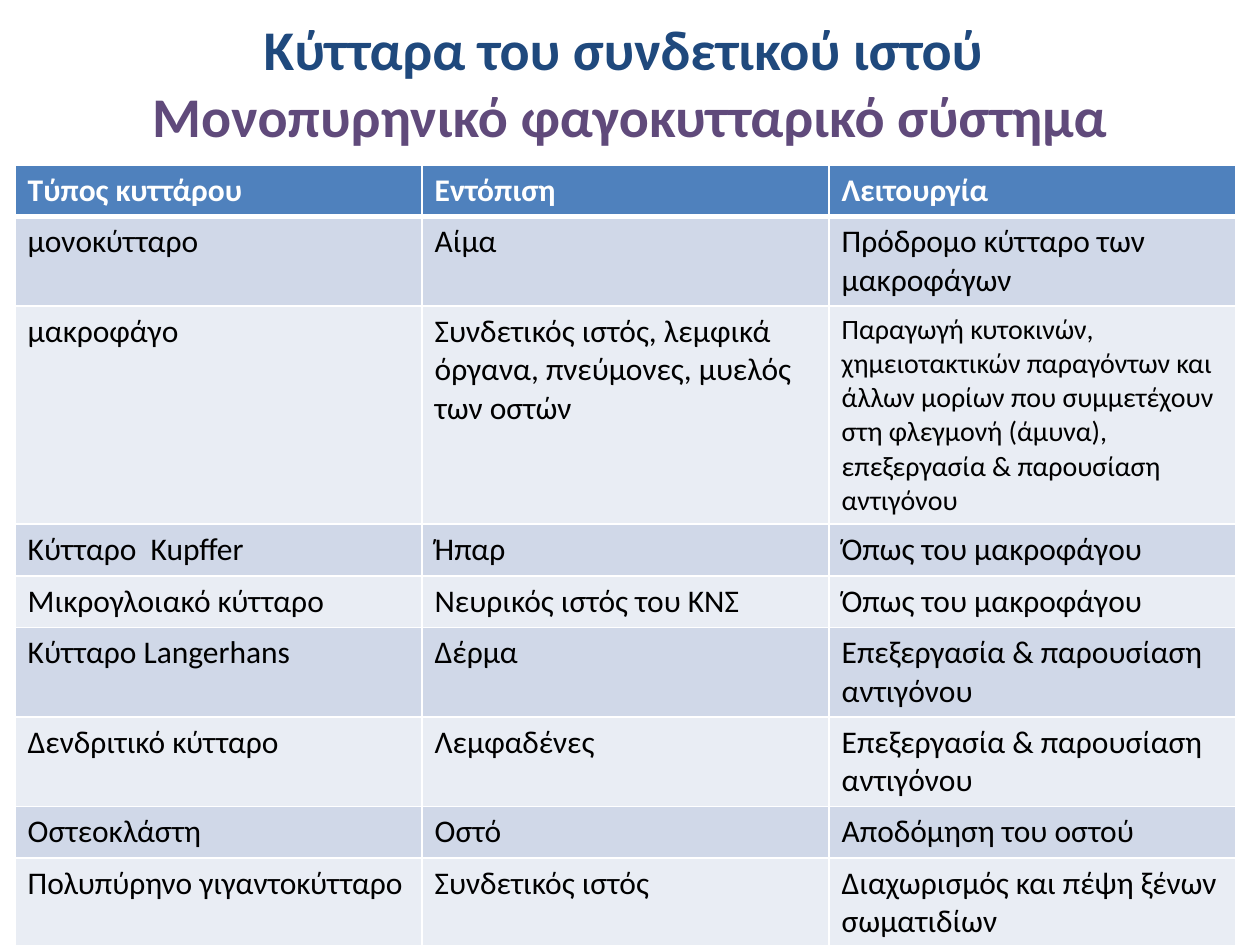
from dataclasses import dataclass

from lxml.etree import SubElement
from pptx import Presentation
from pptx.dml.color import RGBColor as Rgb
from pptx.enum.text import MSO_ANCHOR as Anchor, PP_ALIGN as Align
from pptx.oxml.ns import qn
from pptx.util import Inches, Pt


@dataclass(frozen=True)
class Theme:
    font: str = "Calibri"
    title_size: int = 32
    body_size: int = 18
    long_text_size: int = 16
    title: str = "1F497D"
    subtitle: str = "604A7B"
    header_text: str = "FFFFFF"
    body_text: str = "000000"
    header_fill: str = "4F81BD"
    odd_fill: str = "D0D8E8"
    even_fill: str = "E9EDF4"
    border: str = "FFFFFF"
    thin: int = 1
    thick: int = 3


THEME = Theme()
LONG_TEXT = 100  # characters above which a cell uses the smaller size

TITLE_LINES = [
    ("Κύτταρα του συνδετικού ιστού ", THEME.title),
    ("Μονοπυρηνικό φαγοκυτταρικό σύστημα", THEME.subtitle),
]
CELL_TYPES = [
    ("Τύπος κυττάρου", "Εντόπιση", "Λειτουργία"),
    ("μονοκύτταρο", "Αίμα", "Πρόδρομο κύτταρο των μακροφάγων"),
    ("μακροφάγο",
     "Συνδετικός ιστός, λεμφικά όργανα, πνεύμονες, μυελός των οστών",
     "Παραγωγή κυτοκινών, χημειοτακτικών παραγόντων και άλλων μορίων που "
     "συμμετέχουν στη φλεγμονή (άμυνα), επεξεργασία & παρουσίαση αντιγόνου"),
    ("Κύτταρο  Kupffer", "Ήπαρ", "Όπως του μακροφάγου"),
    ("Μικρογλοιακό κύτταρο", "Νευρικός ιστός του ΚΝΣ", "Όπως του μακροφάγου"),
    ("Κύτταρο Langerhans", "Δέρμα", "Επεξεργασία & παρουσίαση αντιγόνου"),
    ("Δενδριτικό κύτταρο", "Λεμφαδένες", "Επεξεργασία & παρουσίαση αντιγόνου"),
    ("Οστεοκλάστη", "Οστό", "Αποδόμηση του οστού"),
    ("Πολυπύρηνο γιγαντοκύτταρο", "Συνδετικός ιστός",
     "Διαχωρισμός και πέψη ξένων σωματιδίων"),
]


def style_font(font, size, color, bold):
    font.name = THEME.font
    font.size = Pt(size)
    font.bold = bold
    font.color.rgb = Rgb.from_string(color)


def add_title(slide):
    title = slide.shapes.add_textbox(
        Inches(0.5), Inches(0.14), Inches(9), Inches(1.09))
    frame = title.text_frame
    frame.word_wrap = True
    frame.vertical_anchor = Anchor.BOTTOM
    heading = frame.paragraphs[0]
    heading.alignment = Align.CENTER
    style_font(heading.font, THEME.title_size, THEME.title, True)
    for index, (text, color) in enumerate(TITLE_LINES):
        if index:
            heading.add_line_break()
        line = heading.add_run()
        line.text = text
        style_font(line.font, THEME.title_size, color, True)


def set_borders(cell, bottom_width, top_width):
    """Insert the border lines ahead of the fill, as the schema requires."""
    properties = cell._tc.get_or_add_tcPr()
    widths = {"a:lnL": THEME.thin, "a:lnR": THEME.thin,
              "a:lnT": top_width, "a:lnB": bottom_width}
    for position, (side, width) in enumerate(widths.items()):
        line = SubElement(properties, qn(side), w=str(Pt(width)))
        fill = SubElement(line, qn("a:solidFill"))
        SubElement(fill, qn("a:srgbClr"), val=THEME.border)
        properties.insert(position, line)


def fill_cell(cell, text, row):
    is_header = row == 0
    if is_header:
        fill, color = THEME.header_fill, THEME.header_text
    else:
        fill = THEME.odd_fill if row % 2 else THEME.even_fill
        color = THEME.body_text
    size = THEME.long_text_size if len(text) > LONG_TEXT else THEME.body_size
    cell.text = text
    style_font(cell.text_frame.paragraphs[0].font, size, color, is_header)
    cell.fill.solid()
    cell.fill.fore_color.rgb = Rgb.from_string(fill)
    set_borders(cell,
                bottom_width=THEME.thick if is_header else THEME.thin,
                top_width=THEME.thick if row == 1 else THEME.thin)


def add_cell_table(slide):
    """Rows start at one line high and grow with their text."""
    height = Inches(6.12)
    frame = slide.shapes.add_table(
        len(CELL_TYPES), len(CELL_TYPES[0]),
        Inches(0.12), Inches(1.31), Inches(9.69), height)
    table = frame.table
    for row, texts in enumerate(CELL_TYPES):
        table.rows[row].height = Inches(0.41)
        for column, text in enumerate(texts):
            fill_cell(table.cell(row, column), text, row)
    frame.height = height


def main():
    deck = Presentation()
    deck.slide_width, deck.slide_height = Inches(10), Inches(7.5)
    slide = deck.slides.add_slide(deck.slide_layouts[6])
    add_cell_table(slide)
    add_title(slide)
    deck.save("out.pptx")


if __name__ == "__main__":
    main()
